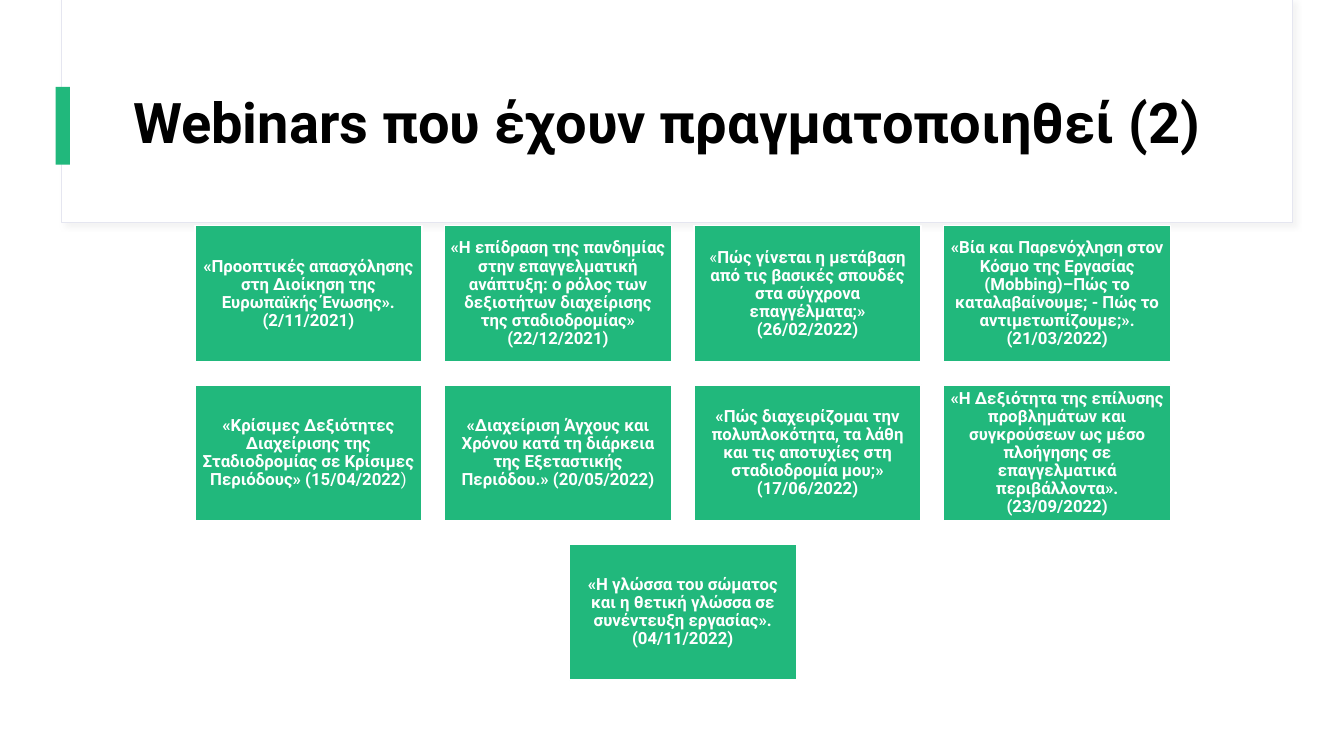
"""Build a slide listing completed webinars as centred rows of green cards."""
from lxml import etree
from pptx import Presentation
from pptx.dml.color import RGBColor
from pptx.enum.shapes import MSO_SHAPE
from pptx.enum.text import MSO_ANCHOR, PP_ALIGN
from pptx.util import Cm, Pt

RECTANGLE = MSO_SHAPE.RECTANGLE
MIDDLE = MSO_ANCHOR.MIDDLE
CENTER, LEFT = PP_ALIGN.CENTER, PP_ALIGN.LEFT

TITLE = "Webinars που έχουν πραγματοποιηθεί (2)"
# Each card: regular opening, bold body, regular ending
WEBINARS = [
    ("", "«Προοπτικές απασχόλησης στη Διοίκηση της Ευρωπαϊκής Ένωσης». (2/11/2021)", ""),
    ("", "«Η επίδραση της πανδημίας στην επαγγελματική ανάπτυξη: ο ρόλος των "
         "δεξιοτήτων διαχείρισης της σταδιοδρομίας» (22/12/2021)", ""),
    ("«", "Πώς γίνεται η μετάβαση από τις βασικές σπουδές στα σύγχρονα "
          "επαγγέλματα;» (26/02/2022)", ""),
    ("", "«Βία και Παρενόχληση στον Κόσμο της Εργασίας (Mobbing)–Πώς το "
         "καταλαβαίνουμε; - Πώς το αντιμετωπίζουμε;». (21/03/2022)", ""),
    ("", "«Κρίσιμες Δεξιότητες Διαχείρισης της Σταδιοδρομίας σε Κρίσιμες "
         "Περιόδους» (15/04/2022", ")"),
    ("", "«Διαχείριση Άγχους και Χρόνου κατά τη διάρκεια της Εξεταστικής "
         "Περιόδου.» (20/05/2022)", ""),
    ("", "«Πώς διαχειρίζομαι την πολυπλοκότητα, τα λάθη και τις αποτυχίες στη "
         "σταδιοδρομία μου;» (17/06/2022)", ""),
    ("", "«Η Δεξιότητα της επίλυσης προβλημάτων και συγκρούσεων ως μέσo πλοήγησης σε "
         "επαγγελματικά περιβάλλοντα». (23/09/2022)", ""),
    ("", "«Η γλώσσα του σώματος και η θετική γλώσσα σε συνέντευξη εργασίας». "
         "(04/11/2022)", ""),
]
COLORS = {"white": "FFFFFF", "green": "21B87C", "border": "E5E6F0",
          "shadow": "D9D9D9", "black": "000000"}
FONT = "Roboto"
COLUMNS = 4
CARD_WIDTH, CARD_HEIGHT = 5.72, 3.43
PITCH_X, PITCH_Y = 6.29, 4.01
GRID_CENTER, GRID_TOP = 17.21, 5.69
INSET = Cm(0.12)
DRAWING = "http://schemas.openxmlformats.org/drawingml/2006/main"


def color(name):
    return RGBColor.from_string(COLORS[name])


def add_rectangle(slide, left, top, width, height, fill, line=None, line_width=1):
    shape = slide.shapes.add_shape(RECTANGLE, Cm(left), Cm(top), Cm(width), Cm(height))
    shape.shadow.inherit = False
    shape.fill.solid()
    shape.fill.fore_color.rgb = color(fill)
    if line:
        shape.line.color.rgb = color(line)
        shape.line.width = Pt(line_width)
    else:
        shape.line.fill.background()
    return shape


def add_soft_shadow(shape):
    effects = shape.element.spPr.find(f"{{{DRAWING}}}effectLst")
    effects.append(etree.fromstring(
        f'<a:outerShdw xmlns:a="{DRAWING}" blurRad="{Pt(4)}" dist="{Pt(3)}" '
        f'dir="2700000" algn="tl" rotWithShape="0"><a:srgbClr val="{COLORS["shadow"]}">'
        '<a:alpha val="30000"/></a:srgbClr></a:outerShdw>'))


def format_run(run, size, name, bold):
    run.font.name = FONT
    run.font.size = Pt(size)
    run.font.bold = bold
    run.font.color.rgb = color(name)


def add_header(slide):
    panel = add_rectangle(slide, 1.56, 0, 31.01, 5.62, "white", "border", 0.75)
    add_soft_shadow(panel)
    add_rectangle(slide, 1.4, 2.19, 0.36, 1.96, "green")
    title = slide.shapes.title
    title.left, title.top, title.width, title.height = Cm(3.1), Cm(1.52), Cm(28.25), Cm(3.28)
    title.element.getparent().append(title.element)
    frame = title.text_frame
    frame.text = TITLE
    frame.vertical_anchor = MIDDLE
    paragraph = frame.paragraphs[0]
    paragraph.alignment = LEFT
    paragraph.line_spacing = 0.9
    format_run(paragraph.runs[0], 40, "black", True)


def add_card(slide, left, top, webinar):
    card = add_rectangle(slide, left, top, CARD_WIDTH, CARD_HEIGHT, "green", "white")
    frame = card.text_frame
    frame.word_wrap = True
    frame.vertical_anchor = MIDDLE
    frame.margin_left = frame.margin_right = INSET
    frame.margin_top = frame.margin_bottom = INSET
    paragraph = frame.paragraphs[0]
    paragraph.alignment = CENTER
    paragraph.line_spacing = 0.9
    for text, bold in zip(webinar, (False, True, False)):
        if text:
            run = paragraph.add_run()
            run.text = text
            format_run(run, 12, "white", bold)


def main():
    presentation = Presentation()
    presentation.slide_width, presentation.slide_height = Cm(33.87), Cm(19.05)
    slide = presentation.slides.add_slide(presentation.slide_layouts[5])
    add_header(slide)
    for start in range(0, len(WEBINARS), COLUMNS):
        row = WEBINARS[start:start + COLUMNS]
        row_left = GRID_CENTER - ((len(row) - 1) * PITCH_X + CARD_WIDTH) / 2
        top = GRID_TOP + start // COLUMNS * PITCH_Y
        for column, webinar in enumerate(row):
            add_card(slide, row_left + column * PITCH_X, top, webinar)
    presentation.save("out.pptx")


if __name__ == "__main__":
    main()
